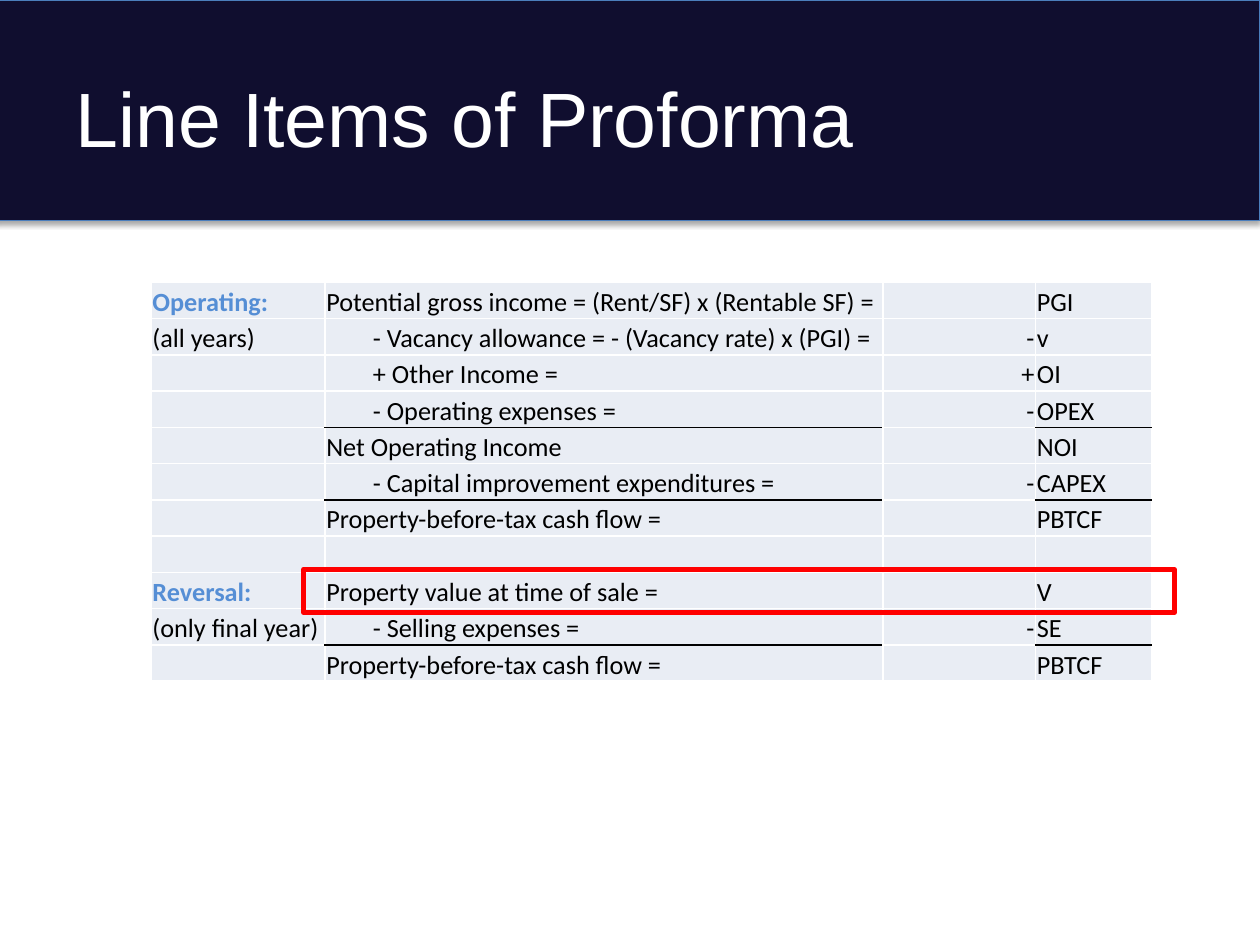
from lxml import etree
from pptx import Presentation
from pptx.dml.color import RGBColor
from pptx.enum.shapes import MSO_SHAPE
from pptx.enum.text import MSO_ANCHOR, PP_ALIGN
from pptx.oxml import parse_xml
from pptx.oxml.ns import nsdecls, qn
from pptx.util import Inches, Pt

RECT = MSO_SHAPE.RECTANGLE
MIDDLE, BOTTOM = MSO_ANCHOR.MIDDLE, MSO_ANCHOR.BOTTOM
LEFT, RIGHT = PP_ALIGN.LEFT, PP_ALIGN.RIGHT

NAVY = RGBColor(0x10, 0x0E, 0x2F)
EDGE_BLUE = RGBColor(0x4B, 0x7E, 0xBC)
HEADING_BLUE = RGBColor(0x55, 0x8E, 0xD5)
CELL_FILL = RGBColor(0xE9, 0xED, 0xF4)
WHITE = RGBColor(0xFF, 0xFF, 0xFF)
BLACK = RGBColor(0, 0, 0)
RED = RGBColor(0xFF, 0, 0)

# section label, line item, sign, symbol; signed items are indented
ROWS = [
    ("Operating:", "Potential gross income = (Rent/SF) x (Rentable SF) =", "", "PGI"),
    ("(all years)", "- Vacancy allowance = - (Vacancy rate) x (PGI) =", "-", "v"),
    ("", "+ Other Income =", "+", "OI"),
    ("", "- Operating expenses =", "-", "OPEX"),
    ("", "Net Operating Income", "", "NOI"),
    ("", "- Capital improvement expenditures =", "-", "CAPEX"),
    ("", "Property-before-tax cash flow =", "", "PBTCF"),
    ("", "", "", ""),
    ("Reversal:", "Property value at time of sale =", "", "V"),
    ("(only final year)", "- Selling expenses =", "-", "SE"),
    ("", "Property-before-tax cash flow =", "", "PBTCF"),
]
COL_WIDTHS = (1.38, 4.43, 1.21, 0.92)
LABEL_COL, ITEM_COL, SIGN_COL, SYMBOL_COL = range(4)
SUBTOTAL_ROWS = (4, 6, 10)


class ProformaSlide:
    title_font, body_font = "Arial", "Calibri"
    title_size, body_size = Pt(44), Pt(15)
    inset = Inches(0.01)
    indent = Inches(0.38)

    def __init__(self, prs):
        self.s = prs.slides.add_slide(prs.slide_layouts[6])

    def rect(self, x, y, w, h, line, weight, fill=None):
        sp = self.s.shapes.add_shape(RECT, Inches(x), Inches(y), Inches(w), Inches(h))
        sp.shadow.inherit = False
        if fill is None:
            sp.fill.background()
        else:
            sp.fill.solid()
            sp.fill.fore_color.rgb = fill
        sp.line.color.rgb = line
        sp.line.width = Pt(weight)
        return sp

    def drop_shadow(self, sp, blur, dist, alpha):
        effects = sp._element.spPr.find(qn("a:effectLst"))
        effects.append(parse_xml(
            f'<a:outerShdw {nsdecls("a")} blurRad="{Pt(blur)}" dist="{Pt(dist)}" '
            f'dir="5400000" rotWithShape="0"><a:srgbClr val="000000">'
            f'<a:alpha val="{alpha * 1000}"/></a:srgbClr></a:outerShdw>'))

    def title(self, text, x, y, w, h):
        tf = self.s.shapes.add_textbox(Inches(x), Inches(y), Inches(w), Inches(h)).text_frame
        tf.word_wrap = True
        tf.vertical_anchor = MIDDLE
        p = tf.paragraphs[0]
        p.text = text
        self.style(p, self.title_font, self.title_size, WHITE)

    def style(self, p, name, size, color, bold=False):
        p.font.name, p.font.size, p.font.bold = name, size, bold
        p.font.color.rgb = color

    def table(self, rows, x, y, h):
        tbl = self.s.shapes.add_table(len(rows), len(COL_WIDTHS), Inches(x), Inches(y),
                                      Inches(sum(COL_WIDTHS)), Inches(h)).table
        tbl.first_row = tbl.horz_banding = False
        for col, width in zip(tbl.columns, COL_WIDTHS):
            col.width = Inches(width)
        for r, row in enumerate(rows):
            tbl.rows[r].height = Inches(h / len(rows))
            for c, text in enumerate(row):
                self.cell(tbl.cell(r, c), text, r, c, indented=c == ITEM_COL and row[SIGN_COL])

    def cell(self, cell, text, r, c, indented):
        ruled = c in (ITEM_COL, SYMBOL_COL)
        self.border(cell, "L", WHITE)
        self.border(cell, "R", WHITE)
        self.border(cell, "T", BLACK if ruled and r in SUBTOTAL_ROWS else WHITE)
        self.border(cell, "B", BLACK if ruled and r + 1 in SUBTOTAL_ROWS else WHITE)
        cell.fill.solid()
        cell.fill.fore_color.rgb = CELL_FILL
        cell.margin_left = self.indent if indented else self.inset
        cell.margin_right = cell.margin_top = self.inset
        cell.margin_bottom = 0
        cell.vertical_anchor = BOTTOM
        p = cell.text_frame.paragraphs[0]
        p.alignment = RIGHT if c == SIGN_COL else LEFT
        heading = c == LABEL_COL and text.endswith(":")
        self.style(p, self.body_font, self.body_size, HEADING_BLUE if heading else BLACK, heading)
        if text:
            p.text = text
        else:  # keeps an empty cell from growing to the default text size
            etree.SubElement(p._p, qn("a:endParaRPr"), sz=str(self.body_size.centipoints))

    def border(self, cell, side, color):
        cell._tc.get_or_add_tcPr().append(parse_xml(
            f'<a:ln{side} {nsdecls("a")} w="{Pt(1)}"><a:solidFill>'
            f'<a:srgbClr val="{color}"/></a:solidFill></a:ln{side}>'))


def main():
    prs = Presentation()
    prs.slide_width, prs.slide_height = Inches(10), Inches(7.5)
    slide = ProformaSlide(prs)
    banner = slide.rect(-0.04, 0, 10.04, 1.75, EDGE_BLUE, 0.75, NAVY)
    slide.drop_shadow(banner, blur=3.1, dist=1.8, alpha=35)
    slide.title("Line Items of Proforma", 0.5, 0.3, 9, 1.25)
    slide.table(ROWS, 1.2, 2.24, 3.17)
    slide.rect(2.41, 4.52, 6.91, 0.34, RED, 3)
    prs.save("out.pptx")


if __name__ == "__main__":
    main()
